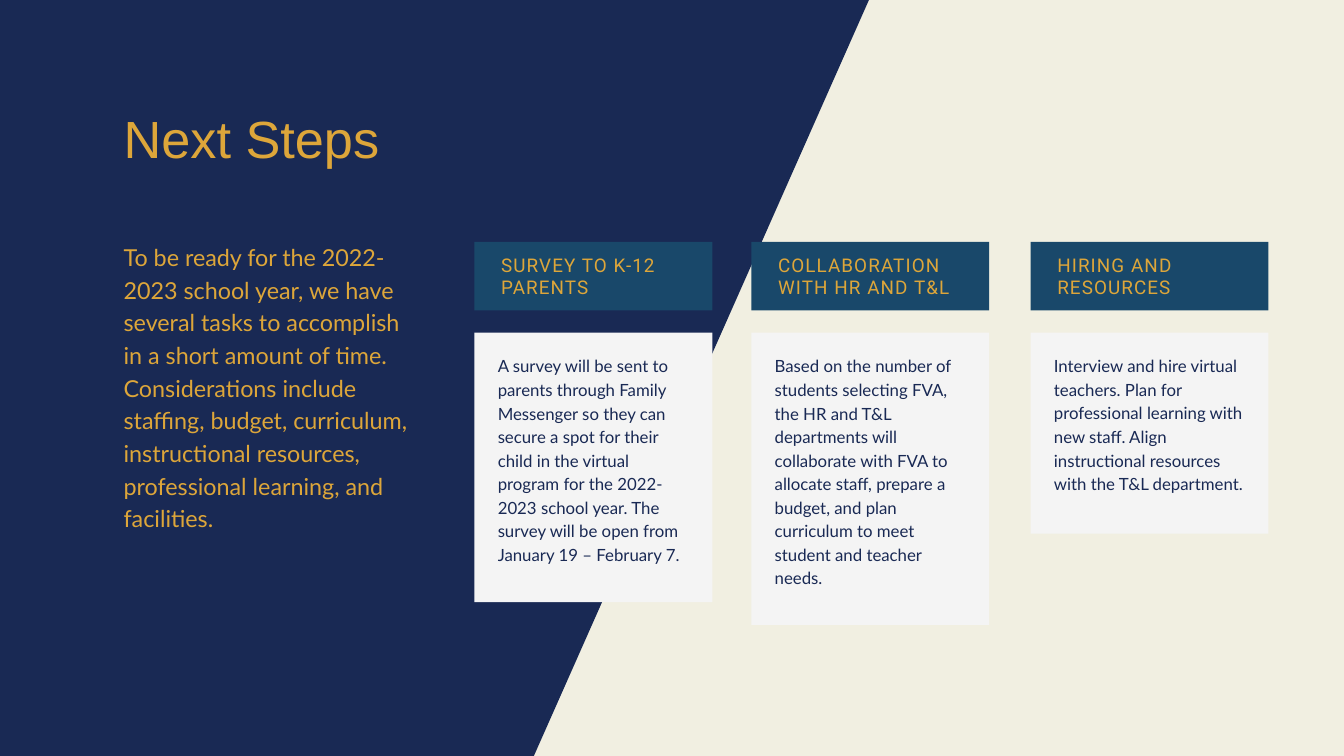
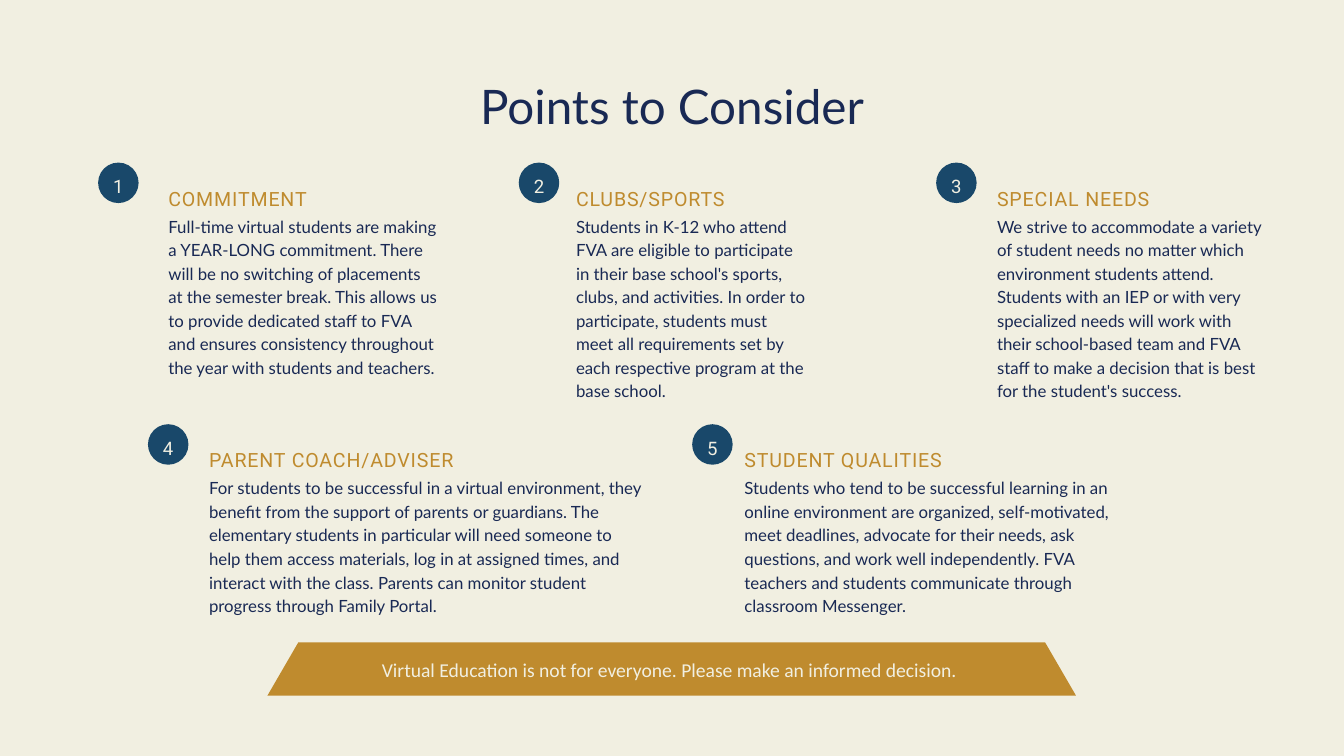
import pptx
import pptx.dml.color
import pptx.enum.shapes
import pptx.enum.text
import pptx.util
from dataclasses import dataclass

Pt = pptx.util.Pt
SHAPE = pptx.enum.shapes.MSO_SHAPE
ALIGN = pptx.enum.text.PP_ALIGN


@dataclass(frozen=True)
class Theme:
    cream: str = "F1EFE1"
    navy: str = "192954"
    teal: str = "19486A"
    gold: str = "DDA63A"
    bronze: str = "BF8B2E"
    card: str = "F4F4F4"
    steps_title: tuple = ("Arial", 56, 58.8)
    points_title: tuple = ("Lato", 51, 71.4)
    intro: tuple = ("Lato", 25, 35)
    body: tuple = ("Lato", 18, 25.2)
    step_label: tuple = ("Roboto", 20.2, 24.2)
    point_label: tuple = ("Roboto", 21, 34.9)
    badge: tuple = ("Roboto", 19.9, 33)
    banner: tuple = ("Calibri", 21, 29.4)


THEME = Theme()
SLIDE_W, SLIDE_H = 1440, 810

STEPS_TITLE = "Next Steps"
STEPS_INTRO = (
    "To be ready for the 2022-2023 school year, we have several tasks to accomplish in a short "
    "amount of time. Considerations include staffing, budget, curriculum, instructional "
    "resources, professional learning, and facilities."
)
STEPS = [
    (508.3, 288.7, "SURVEY TO K-12 PARENTS",
     "A survey will be sent to parents through Family Messenger so they can secure a spot for "
     "their child in the virtual program for the 2022-2023 school year. The survey will be open "
     "from January 19 – February 7."),
    (805, 313.2, "COLLABORATION WITH HR AND T&L",
     "Based on the number of students selecting FVA, the HR and T&L departments will collaborate "
     "with FVA to allocate staff, prepare a budget, and plan curriculum to meet student and "
     "teacher needs."),
    (1104.2, 215.3, "HIRING AND RESOURCES",
     "Interview and hire virtual teachers. Plan for professional learning with new staff. Align "
     "instructional resources with the T&L department."),
]

POINTS_TITLE = "Points to Consider"
POINTS_BANNER = "Virtual Education is not for everyone. Please make an informed decision."
POINT_ROWS = [
    (174.2, 220, [
        (105.1, 180.4, 288.7, "COMMITMENT",
         "Full-time virtual students are making a YEAR-LONG commitment. There will be no "
         "switching of placements at the semester break. This allows us to provide dedicated "
         "staff to FVA and ensures consistency throughout the year with students and teachers."),
        (555.8, 617.2, 249.1, "CLUBS/SPORTS",
         "Students in K-12 who attend FVA are eligible to participate in their base school's "
         "sports, clubs, and activities. In order to participate, students must meet all "
         "requirements set by each respective program at the base school."),
        (1003, 1068.3, 290.9, "SPECIAL NEEDS",
         "We strive to accommodate a variety of student needs no matter which environment "
         "students attend. Students with an IEP or with very specialized needs will work with "
         "their school-based team and FVA staff to make a decision that is best for the "
         "student's success."),
    ]),
    (454.5, 170, [
        (158.5, 224, 465.8, "PARENT COACH/ADVISER",
         "For students to be successful in a virtual environment, they benefit from the support "
         "of parents or guardians. The elementary students in particular will need someone to "
         "help them access materials, log in at assigned times, and interact with the class. "
         "Parents can monitor student progress through Family Portal."),
        (741.6, 797.6, 416.2, "STUDENT QUALITIES",
         "Students who tend to be successful learning in an online environment are organized, "
         "self-motivated, meet deadlines, advocate for their needs, ask questions, and work "
         "well independently. FVA teachers and students communicate through classroom "
         "Messenger."),
    ]),
]


def rgb(color):
    return pptx.dml.color.RGBColor.from_string(color)


def paint(shape, color):
    shape.shadow.inherit = False
    shape.fill.solid()
    shape.fill.fore_color.rgb = rgb(color)
    shape.line.fill.background()
    return shape


def add_block(slide, kind, box, color):
    return paint(slide.shapes.add_shape(kind, *map(Pt, box)), color)


def write(slide, text, *, box, style, color, align=ALIGN.LEFT, tracking=0, title=False):
    if title:
        holder = slide.shapes.title
        holder.left, holder.top, holder.width, holder.height = map(Pt, box)
    else:
        holder = slide.shapes.add_textbox(*map(Pt, box))
    frame = holder.text_frame
    frame.word_wrap = True
    frame.auto_size = pptx.enum.text.MSO_AUTO_SIZE.NONE
    frame.vertical_anchor = pptx.enum.text.MSO_ANCHOR.TOP
    frame.margin_left = frame.margin_top = frame.margin_right = frame.margin_bottom = 0
    typeface, size, leading = style
    paragraph = frame.paragraphs[0]
    paragraph.alignment = align
    paragraph.line_spacing = Pt(leading)
    paragraph.space_before = Pt(0)
    run = paragraph.add_run()
    run.text = text
    run.font.name = typeface
    run.font.size = Pt(size)
    run.font.color.rgb = rgb(color)
    if tracking:
        run._r.get_or_add_rPr().set("spc", str(round(tracking * 100)))


def add_diagonal_panel(slide):
    outline = slide.shapes.build_freeform(0, 0, scale=Pt(1))
    outline.add_line_segments([(931, 0), (571.5, SLIDE_H), (0, SLIDE_H)], close=True)
    panel = paint(outline.convert_to_shape(), THEME.navy)
    slide.shapes._spTree.insert(2, panel._element)


def add_step(slide, left, card_height, label, detail):
    width, label_top, label_height, card_top = 254.9, 259.2, 73.4, 356.4
    add_block(slide, SHAPE.RECTANGLE, (left, label_top, width, label_height), THEME.teal)
    write(slide, label, box=(left + 28.6, label_top + 12.2, 198, 48.4),
          style=THEME.step_label, color=THEME.gold, tracking=1.2)
    add_block(slide, SHAPE.RECTANGLE, (left, card_top, width, card_height), THEME.card)
    write(slide, detail, box=(left + 25, card_top + 21.6, 204.7, card_height - 45.4),
          style=THEME.body, color=THEME.navy)


def add_point(slide, number, top, detail_height, badge_left, left, width, label, detail):
    badge_size = 43.4
    add_block(slide, SHAPE.OVAL, (badge_left, top, badge_size, badge_size), THEME.teal)
    write(slide, str(number), box=(badge_left + 12, top + 4.3, 19.4, 29.5),
          style=THEME.badge, color=THEME.cream, align=ALIGN.CENTER, tracking=0.9)
    write(slide, label, box=(left, top + 16, width, 30.2),
          style=THEME.point_label, color=THEME.bronze, tracking=0.9)
    write(slide, detail, box=(left, top + 54.2, width, detail_height),
          style=THEME.body, color=THEME.navy)


def build_steps(slide):
    add_diagonal_panel(slide)
    write(slide, STEPS_TITLE, box=(132.5, 122.4, 554.4, 61.2),
          style=THEME.steps_title, color=THEME.gold, title=True)
    write(slide, STEPS_INTRO, box=(132.5, 255.6, 314.6, 378),
          style=THEME.intro, color=THEME.gold)
    for step in STEPS:
        add_step(slide, *step)


def build_points(slide):
    write(slide, POINTS_TITLE, box=(371.5, 72.7, 697, 69.1),
          style=THEME.points_title, color=THEME.navy, align=ALIGN.CENTER, title=True)
    number = 0
    for top, detail_height, points in POINT_ROWS:
        for point in points:
            number += 1
            add_point(slide, number, top, detail_height, *point)
    banner = add_block(slide, SHAPE.TRAPEZOID, (286.6, 688.3, 866.2, 56.9), THEME.bronze)
    banner.adjustments[0] = 0.58
    write(slide, POINTS_BANNER, box=(334.5, 700.6, 765.4, 28.8),
          style=THEME.banner, color=THEME.cream, align=ALIGN.CENTER)


def main():
    deck = pptx.Presentation()
    deck.slide_width, deck.slide_height = Pt(SLIDE_W), Pt(SLIDE_H)
    backdrop = deck.slide_master.background.fill
    backdrop.solid()
    backdrop.fore_color.rgb = rgb(THEME.cream)
    title_only = deck.slide_layouts[5]
    for build in (build_steps, build_points):
        build(deck.slides.add_slide(title_only))
    deck.save("out.pptx")


if __name__ == "__main__":
    main()
